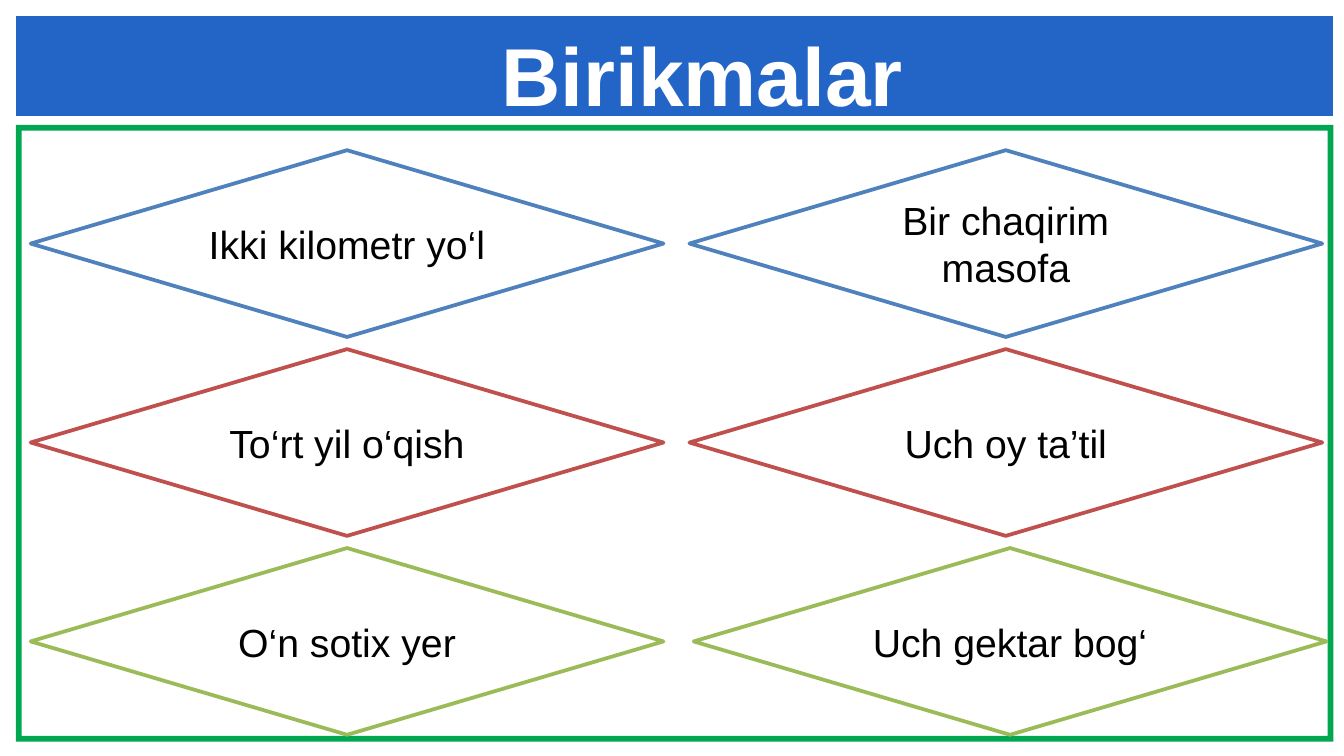
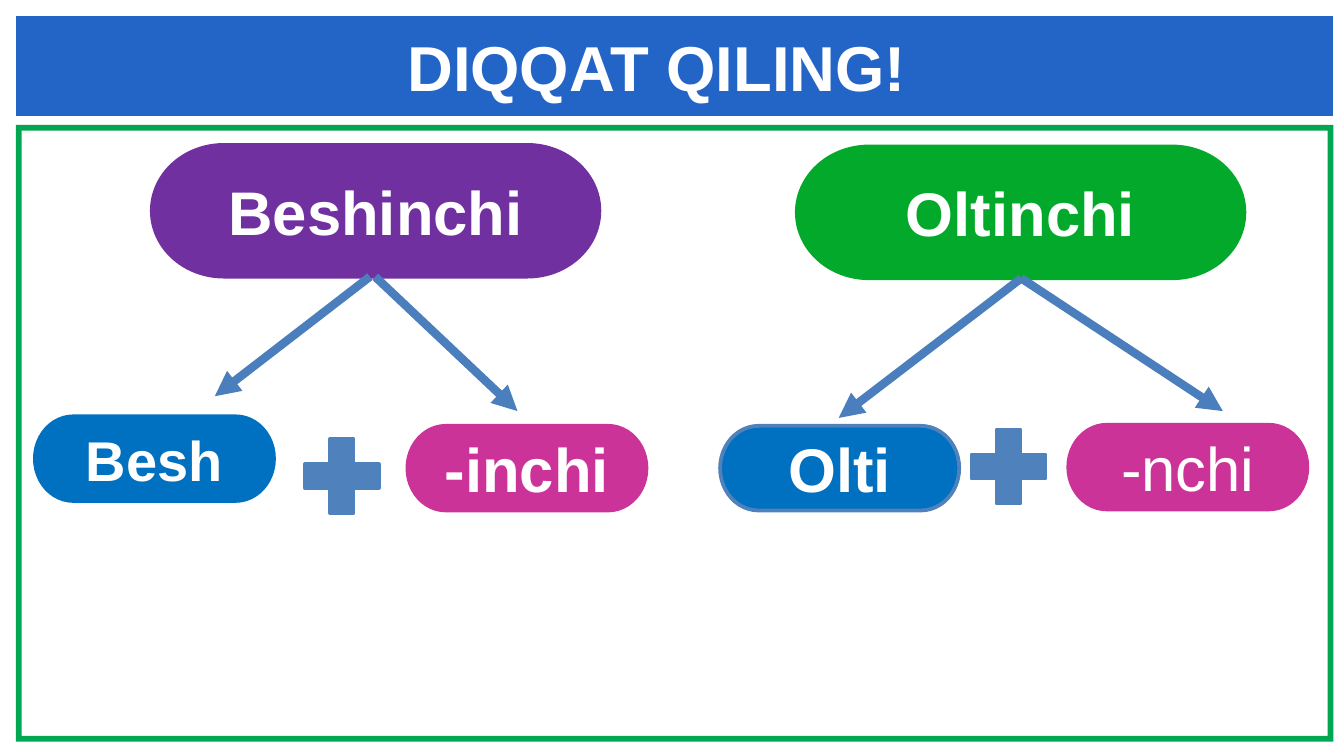
"""Build two Uzbek grammar slides: number phrases and ordinal suffixes."""
from dataclasses import dataclass
from typing import Any

import lxml.etree
import pptx
import pptx.dml.color
import pptx.enum.shapes
import pptx.enum.text
import pptx.oxml.ns
import pptx.util

Cm = pptx.util.Cm
RGBColor = pptx.dml.color.RGBColor
Geometry = pptx.enum.shapes.MSO_SHAPE
Align = pptx.enum.text.PP_ALIGN
Anchor = pptx.enum.text.MSO_ANCHOR
qn = pptx.oxml.ns.qn

WHITE = RGBColor(0xFF, 0xFF, 0xFF)
BLACK = RGBColor(0x00, 0x00, 0x00)
BAND_BLUE = RGBColor(0x23, 0x65, 0xC7)
FRAME_GREEN = RGBColor(0x00, 0xA6, 0x50)
STEEL = RGBColor(0x4F, 0x81, 0xBD)
BRICK = RGBColor(0xC0, 0x50, 0x4D)
OLIVE = RGBColor(0x9B, 0xBB, 0x59)
PURPLE = RGBColor(0x70, 0x30, 0xA0)
GREEN = RGBColor(0x03, 0xA9, 0x2B)
BLUE = RGBColor(0x00, 0x70, 0xC0)
PINK = RGBColor(0xCC, 0x33, 0x99)
ARROW_BLUE = RGBColor(0x4B, 0x7E, 0xBC)

FONT = "Arial"
OUTLINE_PT = 2
ARROW_PT = 4.5
LEFT, RIGHT = 0.3, 25.2
BAND_TOP, BAND_BOTTOM = 0.3, 2.2
FRAME_TOP, FRAME_BOTTOM, FRAME_EDGE = 2.36, 14.02, 0.11
DIAMOND_SIZE = (11.96, 3.53)
DIAMOND_TOP, DIAMOND_STEP = 2.84, 3.76
WORD_SIZE = (8.46, 2.49)
PART_SIZE = (4.52, 1.6)
PLUS_SIZE = (1.9, 1.9)


@dataclass(frozen=True)
class Box:
    """Position and size in centimetres."""

    left: float
    top: float
    width: float
    height: float

    def lengths(self) -> list[Any]:
        """Return the four lengths for python-pptx."""
        return [Cm(v) for v in (self.left, self.top, self.width, self.height)]


@dataclass(frozen=True)
class Label:
    """Text with its character format."""

    text: str
    size: float
    color: RGBColor = WHITE
    bold: bool = True


@dataclass(frozen=True)
class Figure:
    """Outlined preset shape with an optional label."""

    geometry: Any
    box: Box
    fill: RGBColor
    line: RGBColor
    label: Label | None = None


@dataclass(frozen=True)
class Arrow:
    """Arrow between two points in centimetres."""

    start: tuple[float, float]
    end: tuple[float, float]


@dataclass(frozen=True)
class Title:
    """Slide title with its paragraph format."""

    label: Label
    box: Box
    top_inset: float
    paragraph: dict[str, Any]


def apply(target: Any, values: dict[str, Any]) -> None:
    """Set every named attribute on the target."""
    for name, value in values.items():
        setattr(target, name, value)


def write(paragraph: Any, label: Label) -> None:
    """Add the label to the paragraph as one run."""
    run = paragraph.add_run()
    run.text = label.text
    apply(run.font, {"name": FONT, "size": pptx.util.Pt(label.size), "bold": label.bold})
    run.font.color.rgb = label.color


def paint(shape: Any, fill: RGBColor, line: RGBColor | None) -> None:
    """Give the shape a flat fill and an outline or none."""
    shape.shadow.inherit = False
    shape.fill.solid()
    shape.fill.fore_color.rgb = fill
    if line is None:
        shape.line.fill.background()
    else:
        shape.line.color.rgb = line
        shape.line.width = pptx.util.Pt(OUTLINE_PT)


def rectangle(left: float, top: float, right: float, bottom: float) -> list[tuple[int, int]]:
    """Return the four corners of a rectangle."""
    return [(Cm(x), Cm(y)) for x, y in ((left, top), (right, top), (right, bottom), (left, bottom))]


def draw_outline(slide: Any, contours: list[list[tuple[int, int]]], fill: RGBColor) -> None:
    """Draw closed contours as one filled freeform."""
    builder = slide.shapes.build_freeform(*contours[0][0])
    for index, contour in enumerate(contours):
        if index:
            builder.move_to(*contour[0])
        builder.add_line_segments(contour[1:], close=True)
    paint(builder.convert_to_shape(), fill, None)


def draw_title(slide: Any, title: Title) -> None:
    """Draw the title over the band."""
    frame = slide.shapes.add_textbox(*title.box.lengths()).text_frame
    apply(frame, {
        "word_wrap": True,
        "auto_size": pptx.enum.text.MSO_AUTO_SIZE.SHAPE_TO_FIT_TEXT,
        "margin_left": 0,
        "margin_top": Cm(title.top_inset),
        "margin_right": 0,
        "margin_bottom": 0,
    })
    apply(frame.paragraphs[0], title.paragraph)
    write(frame.paragraphs[0], title.label)


def draw_figure(slide: Any, figure: Figure) -> None:
    """Draw a preset shape and its centred label."""
    shape = slide.shapes.add_shape(figure.geometry, *figure.box.lengths())
    paint(shape, figure.fill, figure.line)
    if figure.label:
        apply(shape.text_frame, {"word_wrap": True, "vertical_anchor": Anchor.MIDDLE})
        paragraph = shape.text_frame.paragraphs[0]
        paragraph.alignment = Align.CENTER
        write(paragraph, figure.label)


def draw_arrow(slide: Any, arrow: Arrow) -> None:
    """Draw a straight line with a triangle at its end."""
    ends = [Cm(v) for v in (*arrow.start, *arrow.end)]
    connector = slide.shapes.add_connector(pptx.enum.shapes.MSO_CONNECTOR.STRAIGHT, *ends)
    connector.line.color.rgb = ARROW_BLUE
    connector.line.width = pptx.util.Pt(ARROW_PT)
    properties = connector._element.spPr
    lxml.etree.SubElement(properties.find(qn("a:ln")), qn("a:tailEnd"), type="triangle")
    lxml.etree.SubElement(properties, qn("a:effectLst"))


def add_slide(deck: Any, title: Title, figures: list[Figure], arrows: list[Arrow]) -> None:
    """Add a slide with frame, band, title and content."""
    slide = deck.slides.add_slide(deck.slide_layouts[6])
    outer = rectangle(LEFT, FRAME_TOP, RIGHT, FRAME_BOTTOM)
    inner = rectangle(LEFT + FRAME_EDGE, FRAME_TOP + FRAME_EDGE,
                      RIGHT - FRAME_EDGE, FRAME_BOTTOM - FRAME_EDGE)
    draw_outline(slide, [outer, inner[::-1]], FRAME_GREEN)
    draw_outline(slide, [rectangle(LEFT, BAND_TOP, RIGHT, BAND_BOTTOM)], BAND_BLUE)
    draw_title(slide, title)
    for figure in figures:
        draw_figure(slide, figure)
    for arrow in arrows:
        draw_arrow(slide, arrow)


PHRASES_TITLE = Title(
    Label("Birikmalar", 44), Box(7.52, 0.38, 11.51, 1.96), 0.08,
    {"alignment": Align.CENTER, "space_before": pptx.util.Pt(2.1)},
)
PHRASE_ROWS = [
    (STEEL, [(0.58, "Ikki kilometr yo‘l"), (13.03, "Bir chaqirim masofa")]),
    (BRICK, [(0.58, "To‘rt yil o‘qish"), (13.03, "Uch oy ta’til")]),
    (OLIVE, [(0.58, "O‘n sotix yer"), (13.11, "Uch gektar bog‘")]),
]
PHRASES = [
    Figure(Geometry.DIAMOND, Box(left, DIAMOND_TOP + row * DIAMOND_STEP, *DIAMOND_SIZE),
           WHITE, color, Label(phrase, 21, BLACK, False))
    for row, (color, phrases) in enumerate(PHRASE_ROWS)
    for left, phrase in phrases
]

ORDINALS_TITLE = Title(
    Label("DIQQAT QILING!", 34), Box(7.7, 0.53, 10.54, 1.7), 0,
    {"alignment": Align.LEFT},
)
ORDINAL_PARTS = [
    (2.87, 2.74, WORD_SIZE, PURPLE, PURPLE, Label("Beshinchi", 33)),
    (15.06, 2.77, WORD_SIZE, GREEN, GREEN, Label("Oltinchi", 33)),
    (0.66, 7.87, PART_SIZE, BLUE, BLUE, Label("Besh", 30)),
    (7.7, 8.05, PART_SIZE, PINK, PINK, Label("-inchi", 33)),
    (20.19, 8.03, PART_SIZE, PINK, PINK, Label("-nchi", 33, bold=False)),
    (13.61, 8.05, PART_SIZE, BLUE, STEEL, Label("Olti", 33)),
]
ORDINALS = [
    Figure(Geometry.FLOWCHART_TERMINATOR, Box(left, top, *size), fill, line, label)
    for left, top, size, fill, line, label in ORDINAL_PARTS
]
PLUSES = [
    Figure(Geometry.MATH_PLUS, Box(left, top, *PLUS_SIZE), STEEL, STEEL)
    for left, top in ((5.51, 8.05), (18.11, 7.87))
]
SPLITS = [
    Arrow((7.09, 5.23), (9.78, 7.77)),
    Arrow((6.99, 5.23), (4.06, 7.49)),
    Arrow((19.3, 5.26), (23.11, 7.77)),
    Arrow((19.3, 5.26), (15.85, 7.9)),
]


def main() -> None:
    """Build and save the deck."""
    deck = pptx.Presentation()
    apply(deck, {"slide_width": Cm(25.4), "slide_height": Cm(14.29)})
    add_slide(deck, PHRASES_TITLE, PHRASES, [])
    add_slide(deck, ORDINALS_TITLE, ORDINALS + PLUSES, SPLITS)
    deck.save("out.pptx")


if __name__ == "__main__":
    main()
